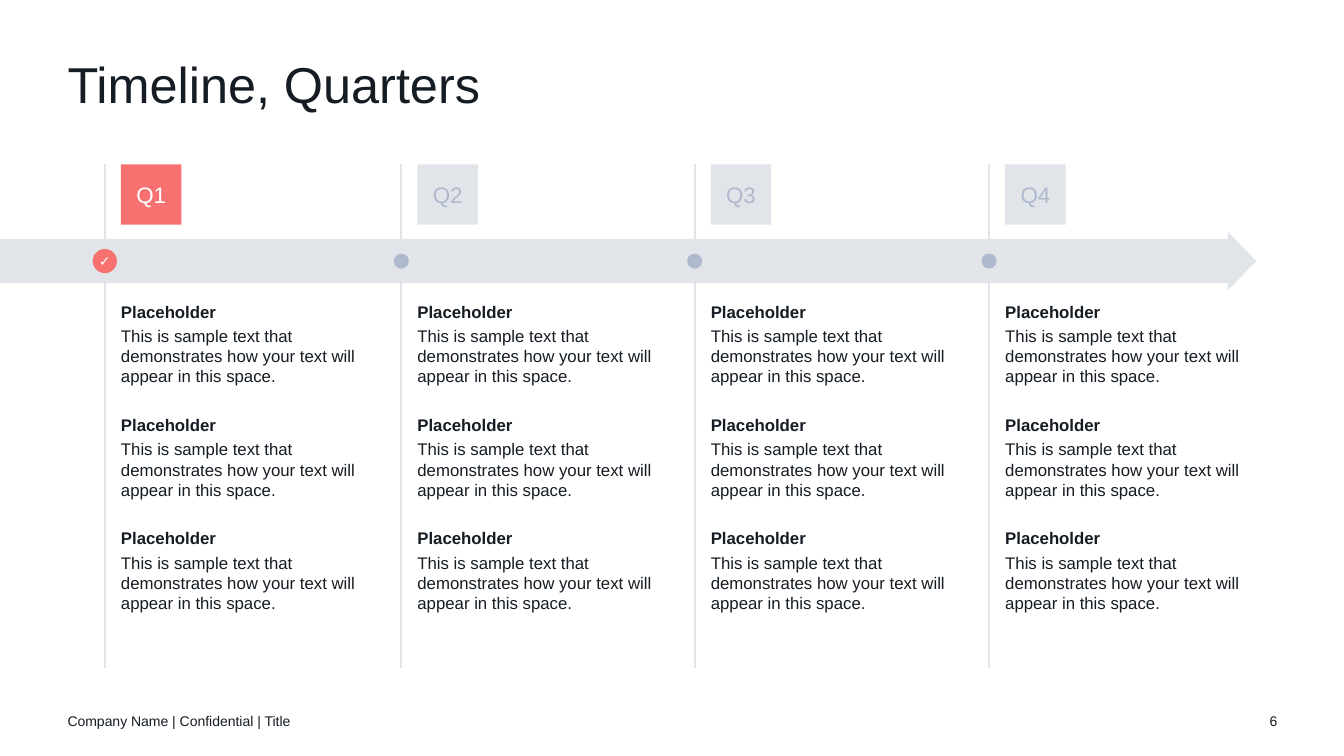
from pptx import Presentation
from pptx.dml.color import RGBColor
from pptx.enum.shapes import MSO_CONNECTOR, MSO_SHAPE
from pptx.enum.text import MSO_ANCHOR, PP_ALIGN
from pptx.oxml.ns import qn
from pptx.util import Inches, Pt
from lxml import etree

RECTANGLE, OVAL = MSO_SHAPE.RECTANGLE, MSO_SHAPE.OVAL
STRAIGHT = MSO_CONNECTOR.STRAIGHT
TOP, MIDDLE = MSO_ANCHOR.TOP, MSO_ANCHOR.MIDDLE
LEFT, CENTER, RIGHT = PP_ALIGN.LEFT, PP_ALIGN.CENTER, PP_ALIGN.RIGHT

FONT = "Arial"
COLORS = {
    "ink": "151C23",
    "bar": "E1E4E9",
    "muted": "AFB9CD",
    "accent": "F87171",
    "white": "FFFFFF",
}
HEADING = "Placeholder"
BODY = "This is sample text that demonstrates how your text will appear in this space."
ENTRIES = [(HEADING, BODY)] * 3
QUARTERS = [("Q1", 1.04, True), ("Q2", 3.98, False), ("Q3", 6.89, False), ("Q4", 9.81, False)]


def color(name):
    return RGBColor.from_string(COLORS[name])


def style_paragraph(paragraph, text, size, color_name="ink", bold=False, align=LEFT):
    paragraph.text = text
    paragraph.alignment = align
    paragraph.font.name = FONT
    paragraph.font.size = Pt(size)
    paragraph.font.bold = bold
    paragraph.font.color.rgb = color(color_name)


def prepare_frame(shape, anchor):
    frame = shape.text_frame
    frame.word_wrap = True
    frame.vertical_anchor = anchor
    frame.margin_left = frame.margin_top = frame.margin_right = frame.margin_bottom = 0
    return frame


def add_text(slide, box, text, size, anchor=MIDDLE, align=LEFT):
    shape = slide.shapes.add_textbox(*map(Inches, box))
    paragraph = prepare_frame(shape, anchor).paragraphs[0]
    style_paragraph(paragraph, text, size, align=align)
    return paragraph


def paint(shape, fill):
    shape.shadow.inherit = False
    shape.fill.solid()
    shape.fill.fore_color.rgb = color(fill)
    shape.line.fill.background()


def add_block(slide, kind, box, fill, text="", size=10, text_color="white", bold=False):
    shape = slide.shapes.add_shape(kind, *map(Inches, box))
    paint(shape, fill)
    if text:
        paragraph = prepare_frame(shape, MIDDLE).paragraphs[0]
        style_paragraph(paragraph, text, size, text_color, bold, CENTER)


def add_arrow(slide, left, top, width, height):
    head, inset = 0.28, 0.07
    right, bottom, neck = left + width, top + height, left + width - head
    points = [
        (neck, top), (right, top + height / 2), (neck, bottom), (neck, bottom - inset),
        (left, bottom - inset), (left, top + inset), (neck, top + inset),
    ]
    points = [(Inches(x), Inches(y)) for x, y in points]
    builder = slide.shapes.build_freeform(*points[0])
    builder.add_line_segments(points[1:], close=True)
    paint(builder.convert_to_shape(), "bar")


def add_rule(slide, x, top, bottom):
    rule = slide.shapes.add_connector(STRAIGHT, Inches(x), Inches(top), Inches(x), Inches(bottom))
    rule.line.color.rgb = color("bar")
    rule.line.width = Pt(1.5)
    etree.SubElement(rule._element.spPr, qn("a:effectLst"))


def add_entries(slide, box):
    frame = prepare_frame(slide.shapes.add_textbox(*map(Inches, box)), TOP)
    for index, (heading, body) in enumerate(ENTRIES):
        title = frame.add_paragraph() if index else frame.paragraphs[0]
        style_paragraph(title, heading, 12, bold=True)
        title.space_before = Pt(17.4 if index else 0)
        title.space_after = Pt(3)
        detail = frame.add_paragraph()
        style_paragraph(detail, body, 12)
        detail.space_after = Pt(3)


def add_quarter(slide, left, top, height, axis, label, current):
    text_left = left + 0.16
    add_rule(slide, left, top, top + height)
    add_entries(slide, (text_left, axis + 0.4, 2.43, 3.31))
    diameter = 0.24 if current else 0.15
    dot = (left - diameter / 2, axis - diameter / 2, diameter, diameter)
    add_block(slide, OVAL, dot, "accent" if current else "muted", "✓" if current else "", bold=True)
    add_block(slide, RECTANGLE, (text_left, top, 0.6, 0.6), "accent" if current else "bar",
              label, 16, "white" if current else "muted")


def add_timeline(slide, top, height):
    axis = top + 0.96
    add_arrow(slide, 0, axis - 0.29, 12.46, 0.58)
    for label, left, current in QUARTERS:
        add_quarter(slide, left, top, height, axis, label, current)


def add_footer(slide, left, top, width, height):
    add_text(slide, (left, top, 4.5, height), "Company Name | Confidential | Title", 10)
    add_text(slide, (left + width - 0.5, top, 0.5, height), "6", 10, align=RIGHT)


def main():
    presentation = Presentation()
    presentation.slide_width = Inches(13.33)
    presentation.slide_height = Inches(7.5)
    slide = presentation.slides.add_slide(presentation.slide_layouts[6])
    title = add_text(slide, (0.67, 0.6, 12, 0.6), "Timeline, Quarters", 36, TOP)
    title.line_spacing = 0.9
    add_timeline(slide, 1.63, 5)
    add_footer(slide, 0.67, 6.95, 12, 0.4)
    presentation.save("out.pptx")


if __name__ == "__main__":
    main()
